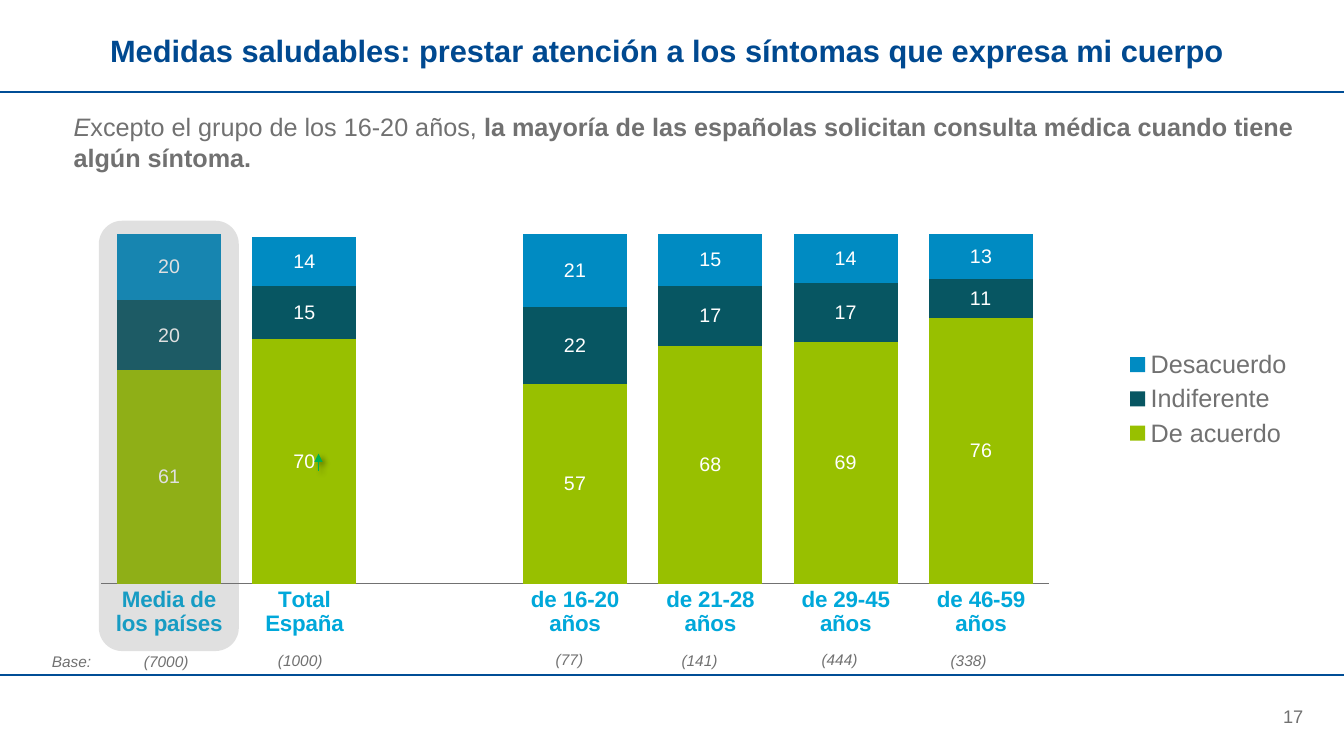
from dataclasses import dataclass

from pptx import Presentation
from pptx.chart.data import CategoryChartData
from pptx.dml.color import RGBColor
from pptx.enum.chart import XL_CHART_TYPE, XL_LEGEND_POSITION, XL_TICK_MARK
from pptx.enum.shapes import MSO_CONNECTOR, MSO_SHAPE
from pptx.enum.text import MSO_ANCHOR, PP_ALIGN
from pptx.oxml import parse_xml
from pptx.oxml.ns import nsdecls, qn
from pptx.util import Pt

STACKED = XL_CHART_TYPE.COLUMN_STACKED
RIGHT_SIDE = XL_LEGEND_POSITION.RIGHT
NO_TICK = XL_TICK_MARK.NONE
STRAIGHT = MSO_CONNECTOR.STRAIGHT
ROUNDED = MSO_SHAPE.ROUNDED_RECTANGLE
TOP, MIDDLE = MSO_ANCHOR.TOP, MSO_ANCHOR.MIDDLE
LEFT, CENTER, RIGHT = PP_ALIGN.LEFT, PP_ALIGN.CENTER, PP_ALIGN.RIGHT


@dataclass(frozen=True)
class Theme:
    face: str = "Arial"
    title: str = "004990"
    rule: str = "004D96"
    gray: str = "717171"
    axis: str = "00A8DA"
    arrow: str = "00B050"
    white: str = "FFFFFF"
    agree: str = "98C000"
    neutral: str = "075662"
    against: str = "008BC2"
    head: int = 22
    body: int = 18
    group: int = 16
    label: int = 14
    page: int = 13
    base: int = 11


def rgb(code):
    return RGBColor.from_string(code)


def place(parent, index, x, y, w, h, inner=False):
    """Fix a chart part's place, as fractions of the chart's size."""
    for old in parent.findall(qn("c:layout")):
        parent.remove(old)
    target = '<c:layoutTarget val="inner"/>' if inner else ""
    parent.insert(index, parse_xml(
        f'<c:layout {nsdecls("c")}><c:manualLayout>{target}'
        '<c:xMode val="edge"/><c:yMode val="edge"/>'
        f'<c:x val="{x}"/><c:y val="{y}"/><c:w val="{w}"/><c:h val="{h}"/>'
        '</c:manualLayout></c:layout>'))


class Board:
    def __init__(self, slide, theme):
        self.shapes = slide.shapes
        self.theme = theme

    def style(self, font, size, color, bold=False, italic=False):
        font.name = self.theme.face
        font.size = Pt(size)
        font.color.rgb = rgb(color)
        font.bold, font.italic = bold, italic

    def text(self, box, runs, size, color, align=LEFT, anchor=TOP, pad=(0, 0)):
        """Add a text box; each run is (words, bold, italic)."""
        frame = self.shapes.add_textbox(*map(Pt, box)).text_frame
        frame.word_wrap = True
        frame.vertical_anchor = anchor
        frame.margin_left = frame.margin_right = Pt(pad[0])
        frame.margin_top = frame.margin_bottom = Pt(pad[1])
        para = frame.paragraphs[0]
        para.alignment = align
        for words, bold, italic in runs:
            run = para.add_run()
            run.text = words
            self.style(run.font, size, color, bold, italic)

    def line(self, x1, y1, x2, y2, color, width):
        link = self.shapes.add_connector(STRAIGHT, *map(Pt, (x1, y1, x2, y2)))
        link.line.color.rgb = rgb(color)
        link.line.width = Pt(width)
        props = link.element.spPr
        props.append(parse_xml(f'<a:effectLst {nsdecls("a")}/>'))
        return props

    def arrow(self, x1, y1, x2, y2, color, width):
        """Draw a line with a triangle at its end and a soft shadow."""
        props = self.line(x1, y1, x2, y2, color, width)
        props.find(qn("a:ln")).append(
            parse_xml(f'<a:tailEnd {nsdecls("a")} type="triangle"/>'))
        props.find(qn("a:effectLst")).append(parse_xml(
            f'<a:outerShdw {nsdecls("a")} blurRad="{Pt(4)}" dist="{Pt(3)}" '
            'dir="2700000"><a:srgbClr val="000000"><a:alpha val="40000"/>'
            '</a:srgbClr></a:outerShdw>'))

    def veil(self, box, color, alpha):
        """Lay a see-through rounded panel; alpha is in percent."""
        shape = self.shapes.add_shape(ROUNDED, *map(Pt, box))
        shape.shadow.inherit = False
        shape.fill.solid()
        shape.fill.fore_color.rgb = rgb(color)
        shape.line.fill.background()
        tint = shape.element.spPr.find(qn("a:solidFill"))[0]
        tint.append(parse_xml(
            f'<a:alpha {nsdecls("a")} val="{alpha * 1000}"/>'))

    def chart(self, box, groups, series):
        """Add stacked columns; each series is (name, color, values)."""
        theme = self.theme
        data = CategoryChartData()
        data.categories = groups
        for name, _, values in series:
            data.add_series(name, values)
        chart = self.shapes.add_chart(STACKED, *map(Pt, box), data).chart
        self.style(chart.font, theme.body, theme.gray)
        chart.has_title = False

        plot = chart.plots[0]
        plot.gap_width, plot.overlap = 30, 100
        plot.vary_by_categories = False
        for bar, (_, color, _) in zip(plot.series, series):
            bar.format.fill.solid()
            bar.format.fill.fore_color.rgb = rgb(color)
            bar.data_labels.show_value = True
            self.style(bar.data_labels.font, theme.label, theme.white)

        axis = chart.category_axis
        axis.major_tick_mark = axis.minor_tick_mark = NO_TICK
        axis.format.line.color.rgb = rgb(theme.gray)
        axis.format.line.width = Pt(0.75)
        self.style(axis.tick_labels.font, theme.group, theme.axis, bold=True)

        scale = chart.value_axis
        scale.minimum_scale, scale.maximum_scale = 0, 100
        scale.major_unit = 20
        scale.has_major_gridlines = False
        scale.visible = False

        chart.has_legend = True
        chart.legend.position = RIGHT_SIDE
        chart.legend.include_in_layout = False
        self.style(chart.legend.font, theme.body, theme.gray)
        area = chart.element.xpath("//c:plotArea")[0]
        place(area, 0, 0.035, 0.035, 0.736, 0.806, inner=True)
        place(chart.element.xpath("//c:legend")[0], 1, 0.82, 0.29, 0.15, 0.25)


def main():
    deck = Presentation()
    deck.slide_width, deck.slide_height = Pt(960), Pt(540)
    theme = Theme()
    board = Board(deck.slides.add_slide(deck.slide_layouts[6]), theme)

    for y in (66, 482.4):
        board.line(0, y, 960, y, theme.rule, 1.5)
    title = "Medidas saludables: prestar atención a los síntomas que expresa mi cuerpo"
    board.text((25, 22.5, 903, 32), [(title, True, False)],
               theme.head, theme.title, CENTER)
    board.text((854.6, 503.3, 76.3, 16), [("17", False, False)],
               theme.page, theme.gray, RIGHT, MIDDLE)

    groups = ["Media de los países", "Total España", "", "de 16-20 años",
              "de 21-28 años", "de 29-45 años", "de 46-59 años"]
    series = [
        ("De acuerdo", theme.agree, (61, 70, None, 57, 68, 69, 76)),
        ("Indiferente", theme.neutral, (20, 15, None, 22, 17, 17, 11)),
        ("Desacuerdo", theme.against, (20, 14, None, 21, 15, 14, 13)),
    ]
    board.chart((40.3, 156.2, 919.4, 310.3), groups, series)

    board.text((43.2, 74.9, 900, 53.3), [
        ("E", False, True),
        ("xcepto el grupo de los 16-20 años, ", False, False),
        ("la mayoría de las españolas solicitan consulta médica cuando tiene "
         "algún síntoma.", True, False),
    ], theme.body, theme.gray, pad=(9.4, 5))

    bases = [("Base:", 18, 465.8), ("(7000)", 85.7, 465.8),
             ("(1000)", 181.4, 465.1), ("(77)", 373.7, 464.4),
             ("(141)", 466.6, 465.1), ("(444)", 566.6, 464.4),
             ("(338)", 658.8, 465.1)]
    for words, x, y in bases:
        board.text((x, y, 66.2, 13.7), [(words, False, True)],
                   theme.base, theme.gray, CENTER)

    board.arrow(227.5, 336.2, 227.5, 324, theme.arrow, 0.75)
    board.veil((70.6, 157.7, 100, 307.4), theme.gray, 21)
    deck.save("out.pptx")


if __name__ == "__main__":
    main()
